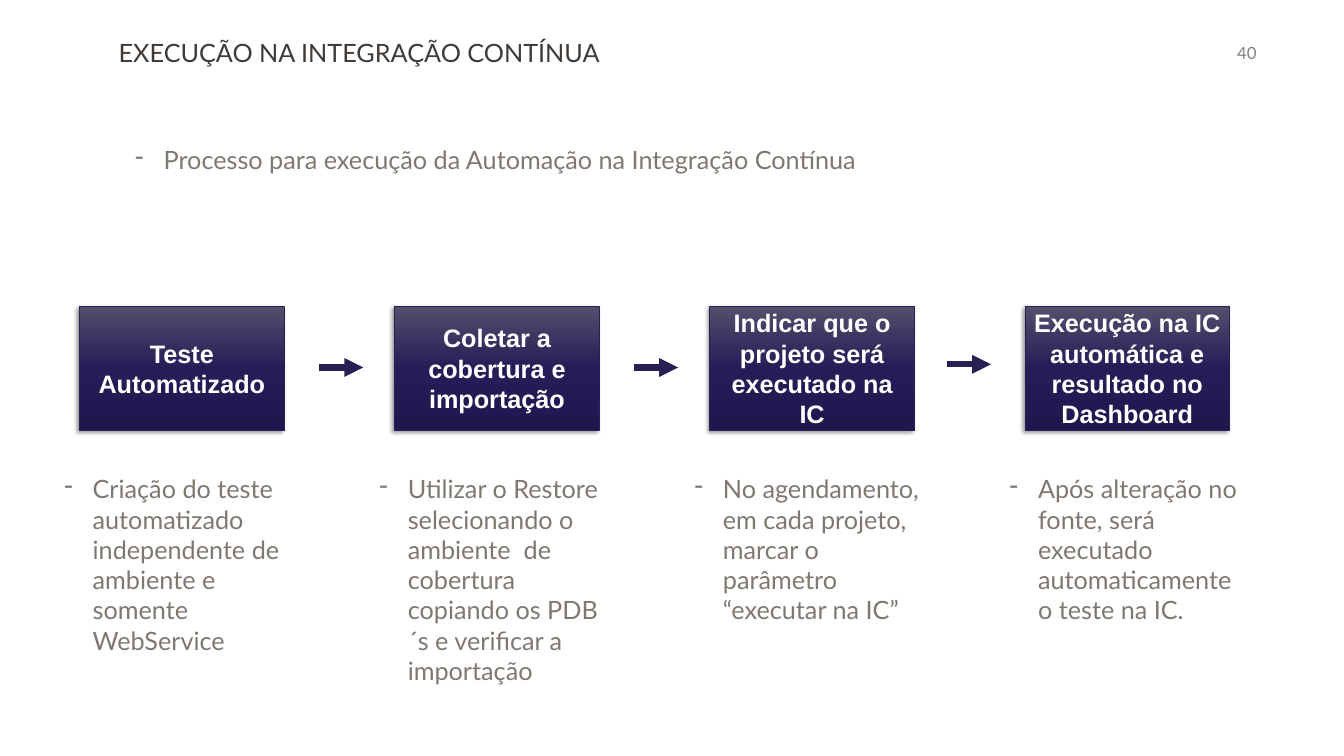
from lxml import etree
from pptx import Presentation
from pptx.dml.color import RGBColor
from pptx.enum.shapes import MSO_CONNECTOR, MSO_SHAPE
from pptx.enum.text import MSO_ANCHOR, PP_ALIGN
from pptx.oxml import parse_xml
from pptx.oxml.ns import nsdecls, qn
from pptx.util import Pt

RECT, LINE = MSO_SHAPE.RECTANGLE, MSO_CONNECTOR.STRAIGHT
TOP, MIDDLE = MSO_ANCHOR.TOP, MSO_ANCHOR.MIDDLE
LEFT, CENTER = PP_ALIGN.LEFT, PP_ALIGN.CENTER
DARK = RGBColor(0x40, 0x3B, 0x37)
GREY = RGBColor(0x7F, 0x78, 0x70)
PALE = RGBColor(0x83, 0x80, 0x7D)
NAVY = RGBColor(0x27, 0x20, 0x54)
WHITE = RGBColor(0xFF, 0xFF, 0xFF)
BLACK = RGBColor(0, 0, 0)
STOPS = (
    (0, RGBColor(0x52, 0x4F, 0x6C)),
    (50, RGBColor(0x25, 0x1D, 0x57)),
    (100, RGBColor(0x1F, 0x18, 0x4F)),
)
STEP = 300
INDENT = 27
STEPS = (
    ("Teste Automatizado",
     "Criação do teste automatizado independente de ambiente e somente WebService", 230),
    ("Coletar a cobertura e importação",
     "Utilizar o Restore selecionando o ambiente  de cobertura copiando os PDB´s "
     "e verificar a importação", 256),
    ("Indicar que o projeto será executado na IC",
     "No agendamento, em cada projeto, marcar o parâmetro “executar na IC”", 187),
    ("Execução na IC automática e resultado no Dashboard",
     "Após alteração no fonte, será executado automaticamente o teste na IC.", 187),
)
ARROWS = ((303.8, 350), (603.6, 350), (901.4, 347))


def add_run(para, text, color, face="Lato", size=24, bold=False):
    """Add one formatted run to a paragraph."""
    run = para.add_run()
    run.text = text
    font = run.font
    font.name, font.size, font.bold = face, Pt(size), bold
    font.color.rgb = color


def add_title(slide, box, text):
    """Place and format the title placeholder."""
    title = slide.shapes.title
    title.left, title.top, title.width, title.height = map(Pt, box)
    frame = title.text_frame
    frame.word_wrap, frame.vertical_anchor = True, TOP
    para = frame.paragraphs[0]
    para.alignment = LEFT
    add_run(para, text, DARK)


def add_number(slide, box, text):
    """Add the page number."""
    frame = slide.shapes.add_textbox(*map(Pt, box)).text_frame
    frame.word_wrap = False
    add_run(frame.paragraphs[0], text, PALE, size=16)


def add_note(slide, box, text):
    """Add a text box holding one dashed paragraph."""
    frame = slide.shapes.add_textbox(*map(Pt, box)).text_frame
    frame.word_wrap = True
    para = frame.paragraphs[0]
    props = para._p.get_or_add_pPr()
    props.set("marL", str(Pt(INDENT)))
    props.set("indent", str(Pt(-INDENT)))
    etree.SubElement(props, qn("a:buChar")).set("char", "-")
    add_run(para, text, GREY)


def add_block(slide, box, text):
    """Add a shaded process block with a soft shadow."""
    block = slide.shapes.add_shape(RECT, *map(Pt, box))
    block.fill.gradient()
    block.fill.gradient_angle = 270
    stops = block._element.spPr.find(qn("a:gradFill")).find(qn("a:gsLst"))
    stops.clear()
    for place, color in STOPS:
        stop = etree.SubElement(stops, qn("a:gs"), pos=str(place * 1000))
        etree.SubElement(stop, qn("a:srgbClr"), val=str(color))
    block.line.color.rgb = NAVY
    block.line.width = Pt(0.5)
    block.shadow.inherit = False
    block._element.spPr.find(qn("a:effectLst")).append(parse_xml(
        f'<a:outerShdw {nsdecls("a")} blurRad="{Pt(4)}" dist="{Pt(3)}" '
        f'dir="{135 * 60000}" rotWithShape="0"><a:srgbClr val="{BLACK}">'
        '<a:alpha val="40000"/></a:srgbClr></a:outerShdw>'))
    frame = block.text_frame
    frame.word_wrap, frame.vertical_anchor = True, MIDDLE
    para = frame.paragraphs[0]
    para.alignment = CENTER
    add_run(para, text, WHITE, "Arial", bold=True)


def add_arrow(slide, left, top, width=42):
    """Add a thick arrow pointing right."""
    arrow = slide.shapes.add_connector(
        LINE, Pt(left), Pt(top), Pt(left + width), Pt(top))
    arrow.line.color.rgb = NAVY
    arrow.line.width = Pt(6)
    etree.SubElement(arrow.line._ln, qn("a:tailEnd"), type="triangle")
    etree.SubElement(arrow._element.spPr, qn("a:effectLst"))


def add_flow(slide, left, top):
    """Add the process blocks, their notes and the arrows between."""
    for i, (name, note, height) in enumerate(STEPS):
        x = left + i * STEP
        add_block(slide, (x, top, 195, 118), name)
        add_note(slide, (x - 21.5, top + 156, 237, height), note)
    for x, y in ARROWS:
        add_arrow(slide, x, y)


def main():
    """Build the slide and save it."""
    deck = Presentation()
    deck.slide_width, deck.slide_height = Pt(1279.44), Pt(720)
    slide = deck.slides.add_slide(deck.slide_layouts[5])
    add_number(slide, (1170.7, 37.4, 34, 27), "40")
    add_title(slide, (105.8, 31.7, 1034, 37), "EXECUÇÃO NA INTEGRAÇÃO CONTÍNUA")
    add_note(slide, (121.7, 134, 1058, 91),
             "Processo para execução da Automação na Integração Contínua")
    add_flow(slide, 75.6, 291.6)
    deck.save("out.pptx")


if __name__ == "__main__":
    main()
